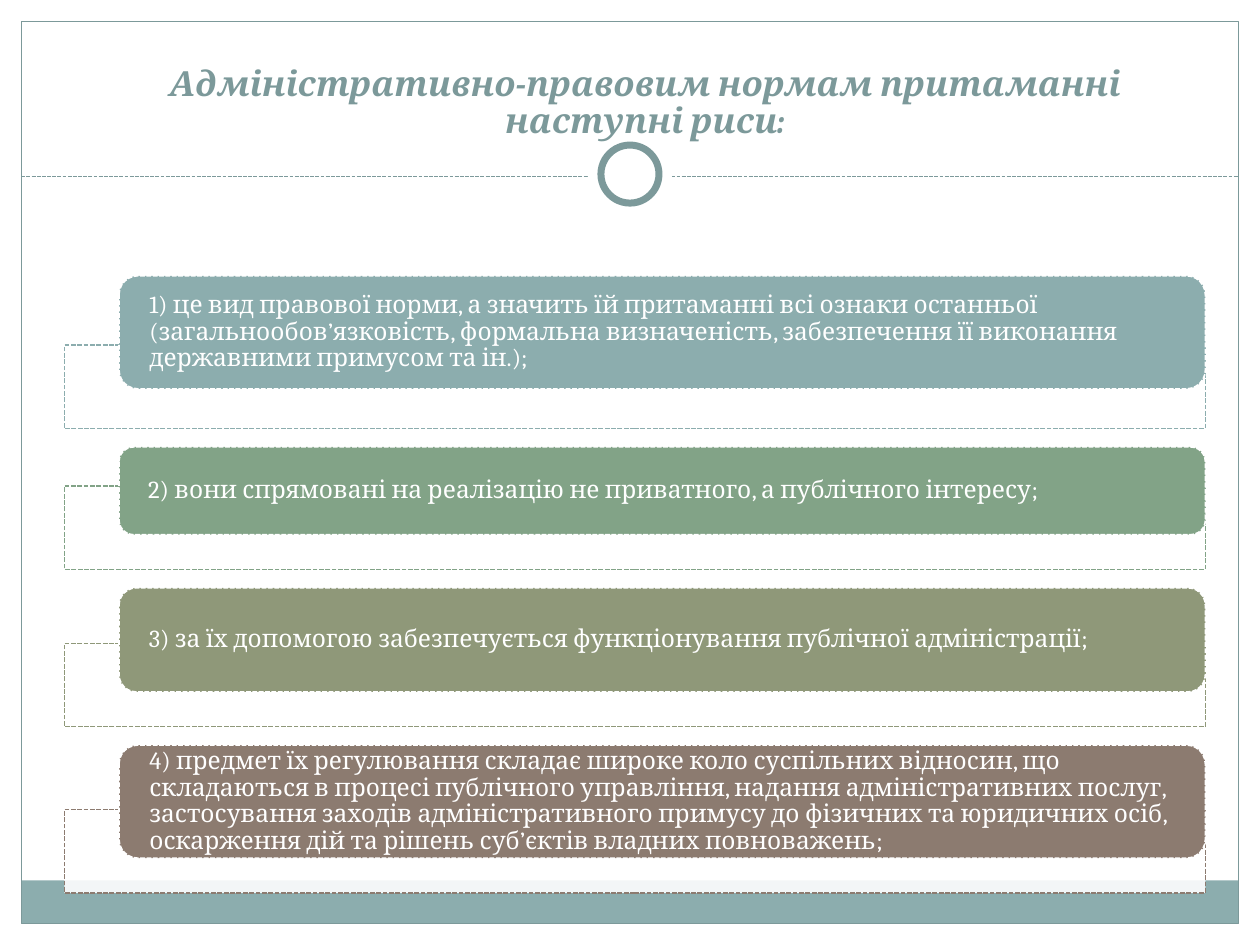
from lxml import etree
from pptx import Presentation
from pptx.dml.color import RGBColor
from pptx.enum import dml, shapes, text
from pptx.oxml import ns
from pptx.util import Cm, Pt

# Content
TITLE = "Адміністративно-правовим нормам притаманні наступні риси:"
# text, colour, label height, drop of the frame below the label (cm)
FEATURES = [
    ("1) це вид правової норми, а значить їй притаманні всі ознаки останньої "
     "(загальнообов’язковість, формальна визначеність, забезпечення її виконання "
     "державними примусом та ін.);", "8CADAE", 2.28, 0.8),
    ("2) вони спрямовані на реалізацію не приватного, а публічного інтересу;",
     "82A387", 1.77, 0.7),
    ("3) за їх допомогою забезпечується функціонування публічної адміністрації;",
     "8F9879", 2.1, 0.7),
    ("4) предмет їх регулювання складає широке коло суспільних відносин, що "
     "складаються в процесі публічного управління, надання адміністративних послуг, "
     "застосування заходів адміністративного примусу до фізичних та юридичних осіб, "
     "оскарження дій та рішень суб’єктів владних повноважень;",
     "8C7B70", 2.28, 0.7),
]
FONT, WHITE, ACCENT, BAND = "Cambria", "FFFFFF", "7C999A", "8CADAE"
WIDTH, HEIGHT, MARGIN = 25.4, 19.05, 0.43
RULE_Y, RING_Y = 3.56, 3.51
FRAME_LEFT, FRAME_WIDTH, FRAME_HEIGHT = 1.3, 23.0, 1.68
LABEL_LEFT, LABEL_WIDTH = 2.4, 21.9
LIST_TOP, GAP = 5.56, 0.37


def rgb(colour):
    return RGBColor.from_string(colour)


def set_line(line, colour, width, dashed=False):
    line.color.rgb = rgb(colour)
    line.width = Pt(width)
    if dashed:
        line.dash_style = dml.MSO_LINE.SQUARE_DOT


def add_box(kind, left, top, width, height, fill=None, line=None, line_width=0.9,
            dashed=False):
    shape = slide.shapes.add_shape(kind, Cm(left), Cm(top), Cm(width), Cm(height))
    shape.shadow.inherit = False
    if fill:
        shape.fill.solid()
        shape.fill.fore_color.rgb = rgb(fill)
    else:
        shape.fill.background()
    if line:
        set_line(shape.line, line, line_width, dashed)
    else:
        shape.line.fill.background()
    return shape


def add_circle(diameter, **style):
    return add_box(shapes.MSO_SHAPE.OVAL, (WIDTH - diameter) / 2,
                   RING_Y - diameter / 2, diameter, diameter, **style)


def set_opacity(shape, percent):
    colour = shape._element.spPr.find(ns.qn("a:solidFill"))[0]
    etree.SubElement(colour, ns.qn("a:alpha")).set("val", str(percent * 1000))


def write(shape, words, size, colour, alignment, bold=None, italic=None):
    paragraph = shape.text_frame.paragraphs[0]
    paragraph.alignment = alignment
    paragraph.line_spacing = 0.9
    run = paragraph.add_run()
    run.text = words
    font = run.font
    font.name, font.size, font.bold, font.italic = FONT, Pt(size), bold, italic
    font.color.rgb = rgb(colour)


def set_frame(shape, anchor, side, bottom=0):
    frame = shape.text_frame
    frame.word_wrap = True
    frame.auto_size = text.MSO_AUTO_SIZE.NONE
    frame.vertical_anchor = anchor
    frame.margin_left = frame.margin_right = Cm(side)
    frame.margin_top, frame.margin_bottom = 0, Cm(bottom)


presentation = Presentation()
presentation.slide_width, presentation.slide_height = Cm(WIDTH), Cm(HEIGHT)
slide = presentation.slides.add_slide(presentation.slide_layouts[5])
RECTANGLE = shapes.MSO_SHAPE.RECTANGLE

# Page frame
inner_width = WIDTH - 2 * MARGIN
add_box(RECTANGLE, 0, 0, WIDTH, 3.86, WHITE)
for left in (0, WIDTH - MARGIN):
    add_box(RECTANGLE, left, 0, MARGIN, HEIGHT, WHITE)
add_box(RECTANGLE, MARGIN, 17.75, inner_width, 0.87, BAND)
add_box(RECTANGLE, MARGIN, MARGIN, inner_width, HEIGHT - 2 * MARGIN,
        line=ACCENT, line_width=0.75)

# Dashed rule with a ring
rule = slide.shapes.add_connector(shapes.MSO_CONNECTOR.STRAIGHT, Cm(MARGIN),
                                  Cm(RULE_Y), Cm(WIDTH - MARGIN), Cm(RULE_Y))
set_line(rule.line, ACCENT, 0.75, dashed=True)
etree.SubElement(rule._element.spPr, ns.qn("a:effectLst"))
add_circle(1.7, fill=WHITE)
add_circle(1.17, fill=WHITE, line=ACCENT, line_width=4)

# Title, brought in front of the page frame
title = slide.shapes.title
title.left, title.top, title.width, title.height = Cm(1.3), Cm(0.53), Cm(23.4), Cm(4.2)
set_frame(title, text.MSO_ANCHOR.BOTTOM, side=0.6, bottom=1.88)
write(title, TITLE, 19.8, ACCENT, text.PP_ALIGN.CENTER, bold=True, italic=True)
slide.shapes._spTree.append(title._element)

# Features: a label over an open frame, stacked with equal gaps
top = LIST_TOP
for words, colour, height, drop in FEATURES:
    frame_bottom = top + height + drop
    frame = add_box(RECTANGLE, FRAME_LEFT, frame_bottom - FRAME_HEIGHT, FRAME_WIDTH,
                    FRAME_HEIGHT, WHITE, colour, dashed=True)
    set_opacity(frame, 90)
    label = add_box(shapes.MSO_SHAPE.ROUNDED_RECTANGLE, LABEL_LEFT, top, LABEL_WIDTH,
                    height, colour, WHITE, dashed=True)
    set_frame(label, text.MSO_ANCHOR.MIDDLE, side=0.5)
    write(label, words, 14, WHITE, text.PP_ALIGN.LEFT)
    top = frame_bottom + GAP

presentation.save("out.pptx")
